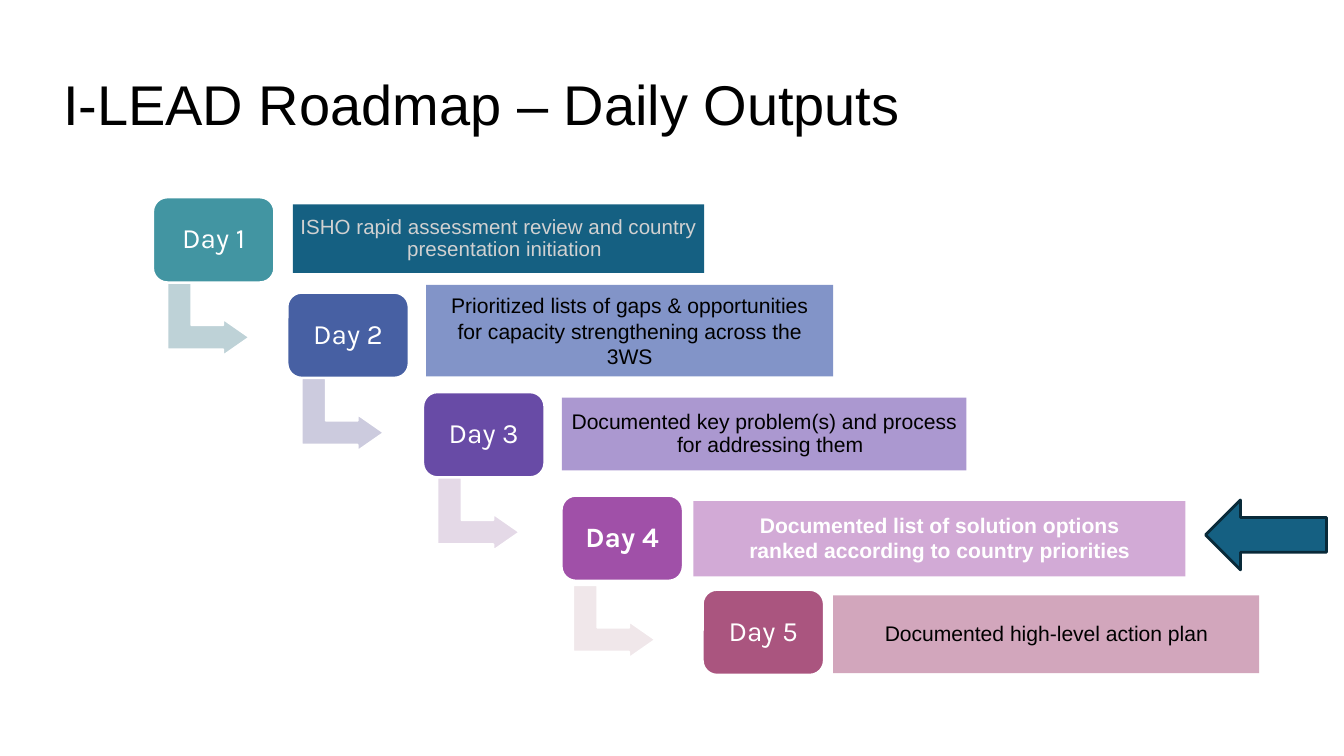
from pptx import Presentation
from pptx import util as u
from pptx.dml.color import RGBColor
from pptx.enum import shapes, text

Inches, Pt = u.Inches, u.Pt
SHAPE = shapes.MSO_SHAPE
CENTER = text.PP_ALIGN.CENTER


def add_box(kind, place, fill, line=None, line_width=1):
    box = page.shapes.add_shape(kind, *map(Inches, place))
    box.shadow.inherit = False
    box.fill.solid()
    box.fill.fore_color.rgb = RGBColor.from_string(fill)
    if line:
        box.line.color.rgb = RGBColor.from_string(line)
        box.line.width = Pt(line_width)
    else:
        box.line.fill.background()
    return box


def write(box, lines, inset, font, align=CENTER, spacing=0.9, gap=0, hang=0):
    frame = box.text_frame
    layout = {"word_wrap": True, "vertical_anchor": text.MSO_ANCHOR.MIDDLE}
    for side in ("left", "right", "top", "bottom"):
        layout["margin_" + side] = Inches(inset)
    for name, value in layout.items():
        setattr(frame, name, value)
    for index, line in enumerate(lines):
        para = frame.add_paragraph() if index else frame.paragraphs[0]
        para.alignment = align
        para.line_spacing = spacing
        if index:
            para.space_before = Pt(gap)
        if hang:
            settings = para._p.get_or_add_pPr()
            settings.set("marL", str(Inches(hang)))
            settings.set("indent", str(-Inches(hang)))
        span = para.add_run()
        span.text = line
        for name, value in font.items():
            if name == "color":
                span.font.color.rgb = RGBColor.from_string(value)
            else:
                setattr(span.font, name, value)


# Widescreen page, 16 to 9
deck = Presentation()
deck.slide_width = Inches(10)
deck.slide_height = Inches(10) * 9 // 16
page = deck.slides.add_slide(deck.slide_layouts[6])

# Title
title = page.shapes.add_textbox(*map(Inches, (0.47, 0.17, 7.8, 1.28)))
write(title, ["I-LEAD Roadmap – Daily Outputs"], 0,
      {"name": "Arial", "size": Pt(30), "color": "000000"},
      align=text.PP_ALIGN.LEFT, spacing=0.8)

# Daily steps: day position and fill, output place, fill, text style and lines
steps = [
    {"day": (1.14, 1.47), "day_fill": "4295A2",
     "place": (2.18, 1.52, 3.06, 0.51), "fill": "156082",
     "ink": "D1D1D1", "size": 11, "inset": 0.02,
     "lines": ["ISHO rapid assessment review and country presentation initiation"]},
    {"day": (2.14, 2.18), "day_fill": "4760A3",
     "place": (3.17, 2.12, 3.03, 0.68), "fill": "8294C8",
     "inset": 0.1, "spacing": 1.0, "hang": 0,
     "lines": ["Prioritized lists of gaps & opportunities for capacity "
               "strengthening across the 3WS"]},
    {"day": (3.15, 2.92), "day_fill": "684BA6",
     "place": (4.18, 2.96, 3.01, 0.54), "fill": "AB98D0",
     "lines": ["Documented key problem(s) and process for addressing them"]},
    {"day": (4.18, 3.69), "day_fill": "A050A8",
     "place": (5.16, 3.73, 3.66, 0.56), "fill": "D2AAD6",
     "ink": "FFFFFF", "bold": True, "hang": 0.07,
     "lines": ["Documented list of solution options",
               "ranked according to country priorities"]},
    {"day": (5.23, 4.39), "day_fill": "AA557F",
     "place": (6.2, 4.43, 3.17, 0.58), "fill": "D2A6BC",
     "lines": ["Documented high-level action plan"]},
]

# Elbow arrows leading from each day to the next
elbows = [(1.28, 2.07, "BED2D7"), (2.28, 2.78, "CCCBDE"),
          (3.29, 3.52, "E4D9E7"), (4.3, 4.32, "F0E7EA")]
for left, top, fill in elbows:
    elbow = add_box(SHAPE.BENT_UP_ARROW, (left, top, 0.54, 0.61), fill, "FFFFFF")
    elbow.rotation = 90
    for index, value in enumerate((0.33, 0.25, 0.36)):
        elbow.adjustments[index] = value

# Day boxes with their outputs
for number, step in enumerate(steps, 1):
    bold = step.get("bold", False)
    day = add_box(SHAPE.ROUNDED_RECTANGLE, (*step["day"], 0.9, 0.63),
                  step["day_fill"], "FFFFFF")
    write(day, [f"Day {number}"], 0.06,
          {"name": "Karla", "size": Pt(15), "bold": bold, "color": "FFFFFF"})
    output = add_box(SHAPE.RECTANGLE, step["place"], step["fill"])
    write(output, step["lines"], step.get("inset", 0.05),
          {"name": "Arial", "size": Pt(step.get("size", 11.3)), "bold": bold,
           "color": step.get("ink", "000000")},
          spacing=step.get("spacing", 0.9), gap=1.3, hang=step.get("hang", 0.09))

# Marker for the current day
add_box(SHAPE.LEFT_ARROW, (8.97, 3.72, 0.9, 0.52), "156082", "092A39", 1.5)

deck.save("out.pptx")
